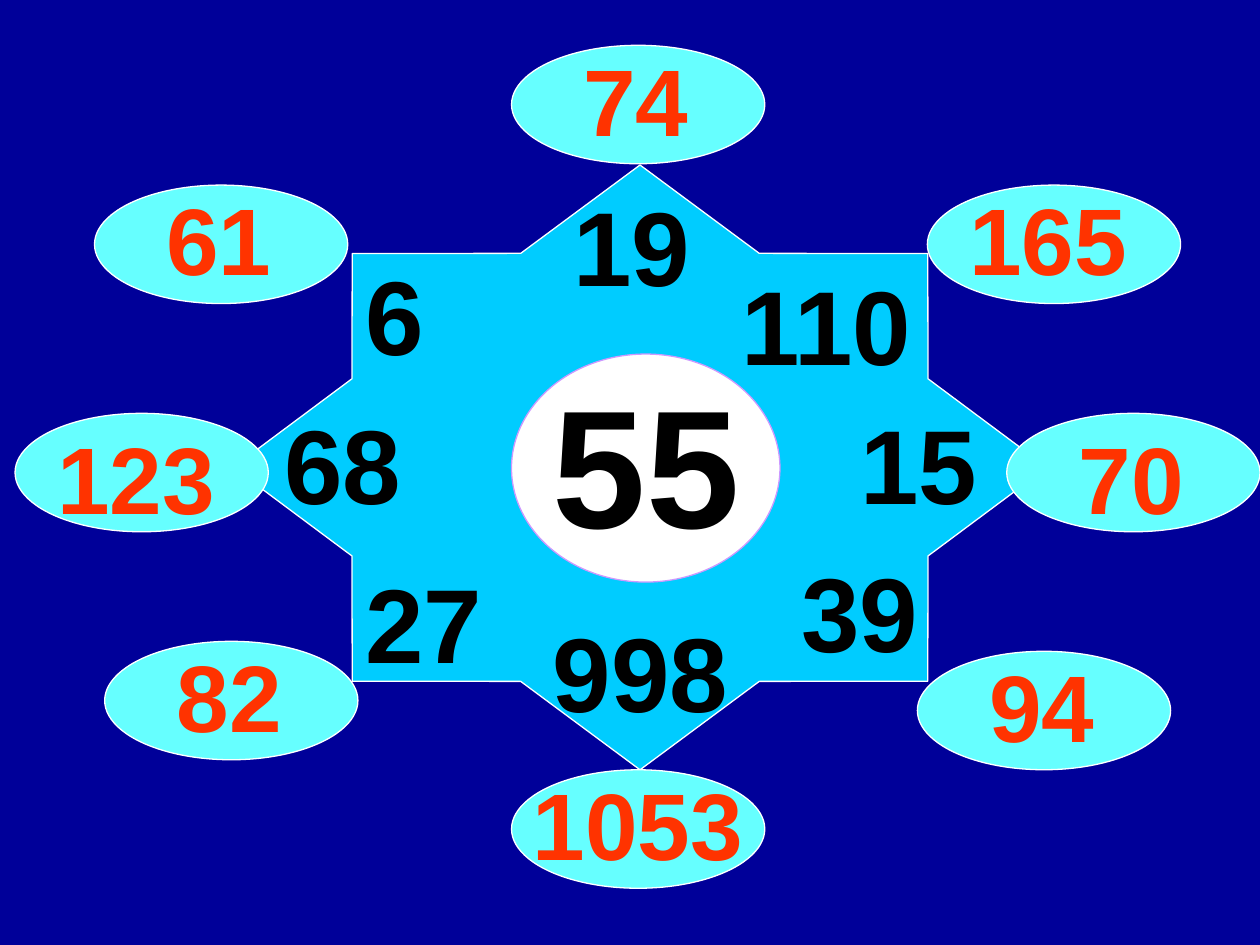
from pptx import Presentation
from pptx.dml.color import RGBColor
from pptx.enum.shapes import MSO_SHAPE
from pptx.enum.text import MSO_AUTO_SIZE
from pptx.util import Pt

NAVY = RGBColor(0x00, 0x00, 0x99)
SKY = RGBColor(0x00, 0xCC, 0xFF)
AQUA = RGBColor(0x66, 0xFF, 0xFF)
LILAC = RGBColor(0xCC, 0x99, 0xFF)
ORANGE = RGBColor(0xFF, 0x33, 0x00)
WHITE = RGBColor(0xFF, 0xFF, 0xFF)
BLACK = RGBColor(0x00, 0x00, 0x00)

STAR_BOX = (133.2, 94.3, 465.1, 345.6)
CENTRE_OFFSET = (159.1, 108)
CENTRE_SIZE = (153.4, 130.3)
OVAL_SIZE = (144.7, 67.7)
DIGIT_WIDTH = 0.556

ADDENDS = [
    ("19", 187.2, 5.8), ("110", 283.7, 51.1), ("15", 351.4, 130.3),
    ("998", 175.7, 249.1), ("27", 68.4, 221.1), ("68", 22.3, 130.3),
    ("6", 68.4, 45.4), ("39", 317.5, 215.3),
]
SUMS = [
    ("82", 59.8, 366.5, 34, -5.7), ("74", 292.3, 25.9, 34, -5.7),
    ("61", 54, 105.8, 34, -5.7), ("123", 8.6, 236.2, 17, 0),
    ("70", 575.3, 236.2, 34, 0), ("94", 524.2, 372.2, 34, -5.7),
    ("1053", 292.3, 439.9, 5, -5.7), ("165", 529.9, 105.8, 17, -5.7),
]


def add_figure(page, kind, box, fill, line):
    """Add a filled and outlined preset shape in the given box."""
    shape = page.shapes.add_shape(kind, *map(Pt, box))
    shape.shadow.inherit = False
    shape.fill.solid()
    shape.fill.fore_color.rgb = fill
    shape.line.color.rgb = line
    shape.line.width = Pt(0.75)
    return shape


def add_number(page, number, left, top, size, color):
    """Add a bold number in a text box sized to its digits."""
    width = len(number) * size * DIGIT_WIDTH + 14.4
    height = size * 1.2 + 7.2
    frame = page.shapes.add_textbox(Pt(left), Pt(top), Pt(width), Pt(height)).text_frame
    frame.word_wrap = False
    frame.auto_size = MSO_AUTO_SIZE.SHAPE_TO_FIT_TEXT
    span = frame.paragraphs[0].add_run()
    span.text = number
    span.font.name = "Arial"
    span.font.size = Pt(size)
    span.font.bold = True
    span.font.color.rgb = color


def add_star(page, box):
    """Add the star with its central number and the addends in its points."""
    left, top = box[:2]
    star = add_figure(page, MSO_SHAPE.STAR_8_POINT, box, SKY, WHITE)
    star.adjustments[0] = 0.383
    centre_left, centre_top = left + CENTRE_OFFSET[0], top + CENTRE_OFFSET[1]
    add_figure(page, MSO_SHAPE.OVAL, (centre_left, centre_top, *CENTRE_SIZE), WHITE, LILAC)
    add_number(page, "55", centre_left + 16.6, centre_top, 96, BLACK)
    for number, across, down in ADDENDS:
        add_number(page, number, left + across, top + down, 60, BLACK)


def add_sum(page, number, box, across, down):
    """Add an oval holding the sum for one point of the star."""
    add_figure(page, MSO_SHAPE.OVAL, box, AQUA, WHITE)
    add_number(page, number, box[0] + across, box[1] + down, 54, ORANGE)


def main():
    """Build the number star slide and save it."""
    deck = Presentation()
    deck.slide_width, deck.slide_height = Pt(720), Pt(540)
    page = deck.slides.add_slide(deck.slide_layouts[6])
    page.background.fill.solid()
    page.background.fill.fore_color.rgb = NAVY
    add_star(page, STAR_BOX)
    for number, left, top, across, down in SUMS:
        add_sum(page, number, (left, top, *OVAL_SIZE), across, down)
    deck.save("out.pptx")


if __name__ == "__main__":
    main()
